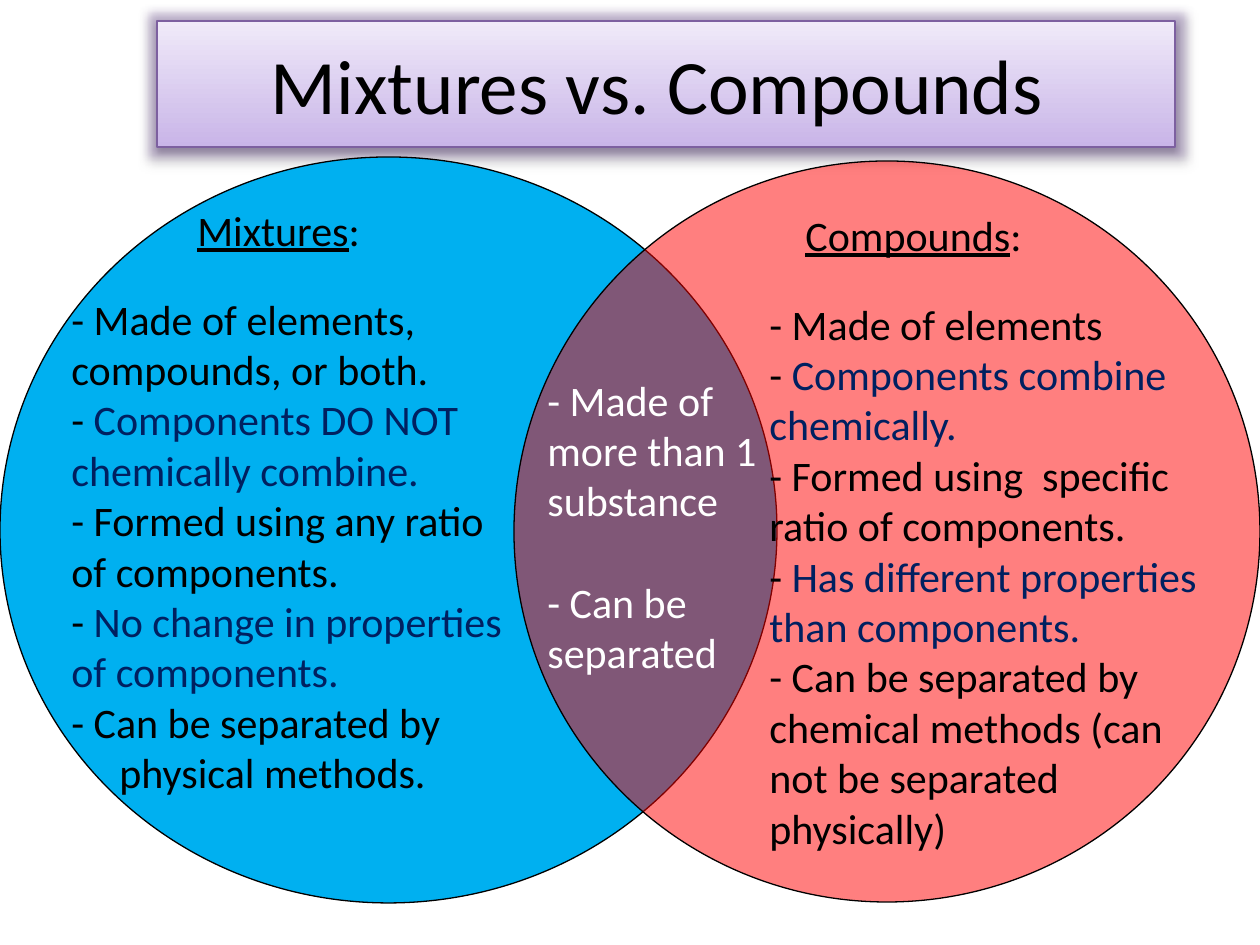
from dataclasses import dataclass

from lxml.etree import SubElement
from pptx import Presentation
from pptx.dml.color import RGBColor
from pptx.enum.shapes import MSO_SHAPE as Shape
from pptx.enum.text import MSO_ANCHOR as Anchor, MSO_AUTO_SIZE as AutoSize, PP_ALIGN as Align
from pptx.oxml.ns import qn
from pptx.util import Emu, Pt

PX = 914400 / 126
FONT = "Calibri"
BLACK = RGBColor(0x00, 0x00, 0x00)
WHITE = RGBColor(0xFF, 0xFF, 0xFF)
NAVY = RGBColor(0x00, 0x20, 0x60)
BLUE = RGBColor(0x00, 0xB0, 0xF0)
RED = RGBColor(0xFF, 0x00, 0x00)
PURPLE = RGBColor(0x7D, 0x60, 0xA0)
LILAC = RGBColor(0xC9, 0xB5, 0xE8)
PALE_LILAC = RGBColor(0xF0, 0xEA, 0xF9)


@dataclass(frozen=True)
class Frame:
    left: int
    top: int
    width: int
    height: int

    def emu(self) -> tuple:
        return tuple(px(v) for v in (self.left, self.top, self.width, self.height))


@dataclass(frozen=True)
class Circle:
    frame: Frame
    color: RGBColor
    opacity: int


@dataclass(frozen=True)
class Line:
    text: str
    color: RGBColor = BLACK
    indent: int = 0
    gap: int = 0
    heading: bool = False


@dataclass(frozen=True)
class TextBlock:
    frame: Frame
    lines: tuple


CIRCLES = (
    Circle(Frame(0, 157, 777, 746), BLUE, 100),
    Circle(Frame(514, 161, 746, 741), RED, 50),
)
BLOCKS = (
    TextBlock(Frame(59, 198, 476, 687), (
        Line("Mixtures", indent=126, gap=22, heading=True),
        Line("Made of elements, compounds, or both."),
        Line("Components DO NOT chemically combine.", NAVY),
        Line("Formed using any ratio of components."),
        Line("No change in properties of components.", NAVY),
        Line("Can be separated by"),
        Line("physical methods.", indent=48),
    )),
    TextBlock(Frame(757, 203, 471, 738), (
        Line("Compounds", indent=36, gap=22, heading=True),
        Line("Made of elements"),
        Line("Components combine chemically.", NAVY),
        Line("Formed using  specific ratio of components."),
        Line("Has different properties than components.", NAVY),
        Line("Can be separated by chemical methods (can not be separated physically)"),
    )),
    TextBlock(Frame(535, 368, 262, 357), (
        Line("Made of more than 1 substance", WHITE, gap=29),
        Line("Can be separated", WHITE),
    )),
)


def px(value: int) -> Emu:
    return Emu(round(value * PX))


def add_text(para, text: str, *, size: int = 24, color: RGBColor = BLACK,
             underline: bool = False) -> None:
    span = para.add_run()
    span.text = text
    font = span.font
    font.name, font.size, font.underline = FONT, Pt(size), underline
    font.color.rgb = color


def add_alpha(color_element, percent: int) -> None:
    SubElement(color_element, qn("a:alpha"), val=str(percent * 1000))


def add_effect(effects, name: str, color: RGBColor, opacity: int, **settings: str) -> None:
    effect = SubElement(effects, qn(name), **settings)
    add_alpha(SubElement(effect, qn("a:srgbClr"), val=str(color)), opacity)


def draw_title(page, text: str, frame: Frame) -> None:
    title = page.shapes.title
    title.left, title.top, title.width, title.height = frame.emu()
    title.fill.gradient()
    title.fill.gradient_angle = 90
    for stop, color, position in zip(title.fill.gradient_stops, (LILAC, PALE_LILAC), (0, 1)):
        stop.color.rgb = color
        stop.position = position
    title.line.color.rgb = PURPLE
    title.line.width = Pt(0.75)
    effects = SubElement(title.element.spPr, qn("a:effectLst"))
    add_effect(effects, "a:glow", PURPLE, 40, rad=str(Pt(11)))
    add_effect(effects, "a:outerShdw", BLACK, 38, blurRad="40000", dist="20000",
               dir="5400000", rotWithShape="0")
    body = title.text_frame
    body.auto_size = AutoSize.NONE
    body.word_wrap = True
    body.vertical_anchor = Anchor.MIDDLE
    body.margin_right = px(30)
    para = body.paragraphs[0]
    para.alignment = Align.CENTER
    add_text(para, text, size=44)


def draw_circle(page, circle: Circle) -> None:
    oval = page.shapes.add_shape(Shape.OVAL, *circle.frame.emu())
    oval.shadow.inherit = False
    oval.fill.solid()
    oval.fill.fore_color.rgb = circle.color
    if circle.opacity < 100:
        add_alpha(oval.element.spPr.find(f"{qn('a:solidFill')}/{qn('a:srgbClr')}"), circle.opacity)
    oval.line.color.rgb = BLACK
    oval.line.width = Pt(0.75)


def draw_line(para, line: Line) -> None:
    para.space_after = Pt(line.gap)
    if line.indent:
        para._p.get_or_add_pPr().set("marL", str(px(line.indent)))
    if line.heading:
        add_text(para, line.text, underline=True)
        add_text(para, ":")
        return
    if not line.indent:
        add_text(para, "- ", color=BLACK if line.color == NAVY else line.color)
    add_text(para, line.text, color=line.color)


def draw_block(page, block: TextBlock) -> None:
    body = page.shapes.add_textbox(*block.frame.emu()).text_frame
    body.word_wrap = True
    body.auto_size = AutoSize.SHAPE_TO_FIT_TEXT
    for number, line in enumerate(block.lines):
        draw_line(body.add_paragraph() if number else body.paragraphs[0], line)


def main() -> None:
    deck = Presentation()
    deck.slide_width, deck.slide_height = px(1260), px(945)
    page = deck.slides.add_slide(deck.slide_layouts[5])
    draw_title(page, "Mixtures vs. Compounds", Frame(157, 21, 1018, 126))
    for circle in CIRCLES:
        draw_circle(page, circle)
    for block in BLOCKS:
        draw_block(page, block)
    deck.save("out.pptx")


if __name__ == "__main__":
    main()
